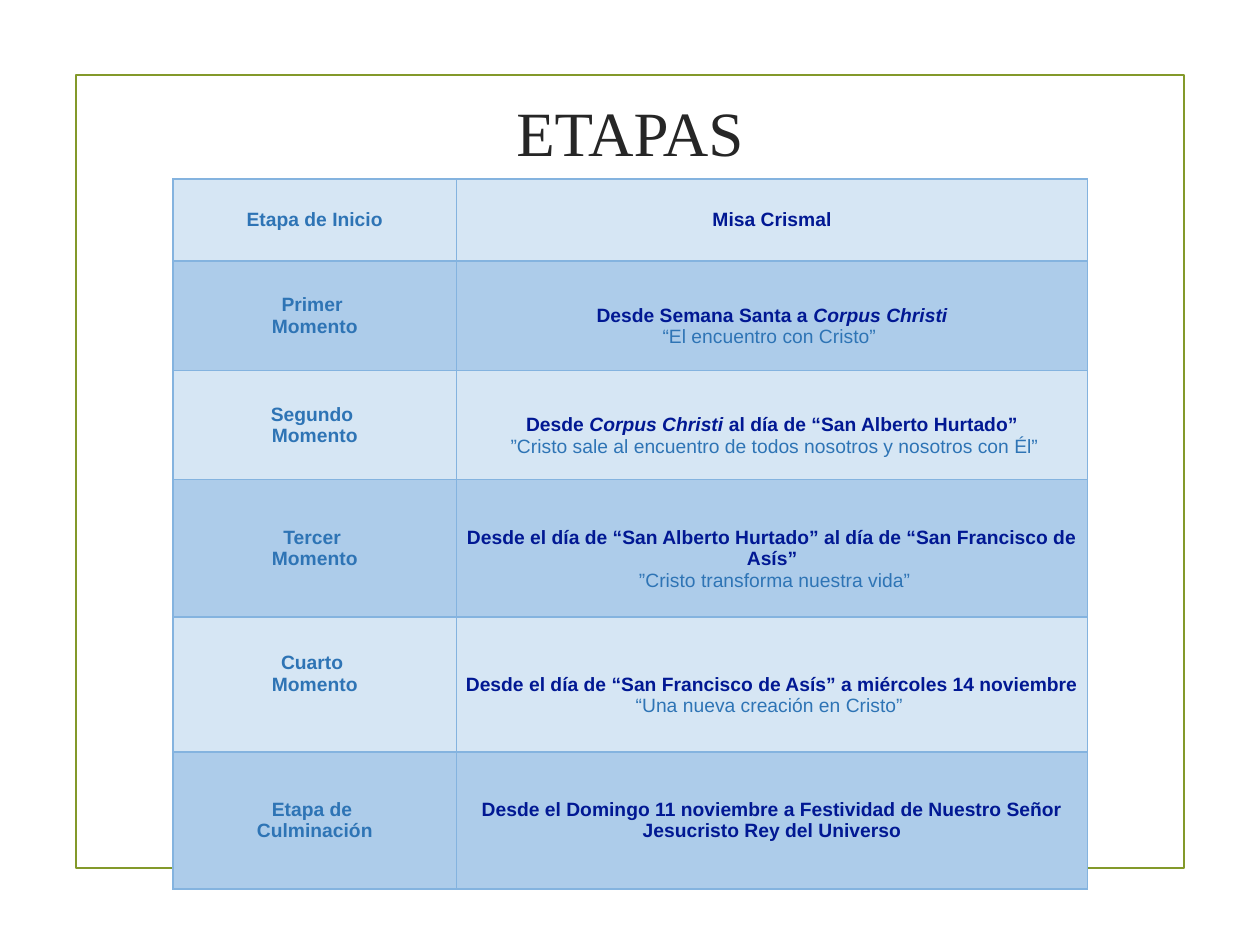
from dataclasses import dataclass

from lxml.etree import SubElement
from pptx import Presentation
from pptx.dml.color import RGBColor as Color
from pptx.enum.shapes import MSO_SHAPE as Shape
from pptx.enum.text import MSO_ANCHOR as Anchor, PP_ALIGN as Align
from pptx.oxml.ns import qn
from pptx.util import Pt


@dataclass(frozen=True)
class Theme:
    frame: str = "83992A"
    title: str = "262626"
    label: str = "2E74B5"
    period: str = "011893"
    border: str = "84B3DF"
    bands: tuple = ("D6E6F4", "ADCCEA")
    title_font: str = "Times New Roman"
    table_font: str = "Arial"
    title_size: float = 36
    table_size: float = 11
    line_height: float = 12.3


@dataclass(frozen=True)
class Stage:
    label: tuple
    period: tuple
    motto: str = ""
    height: float = 62.5
    label_bottom: float = 0


STAGES = [
    Stage(("Etapa de Inicio",), ("Misa Crismal",), height=47),
    Stage(("Primer ", "Momento"), ("Desde Semana Santa a ", "Corpus Christi"),
          "“El encuentro con Cristo” "),
    Stage(("Segundo ", "Momento"),
          ("Desde ", "Corpus Christi", " al día de “San Alberto Hurtado”"),
          " ”Cristo sale al encuentro de todos nosotros y nosotros con Él”"),
    Stage(("Tercer ", "Momento"),
          ("Desde el día de “San Alberto Hurtado” al día de “San Francisco de Asís”",),
          " ”Cristo transforma nuestra vida”", 78.5),
    Stage(("Cuarto ", "Momento"),
          ("Desde el día de “San Francisco de Asís” a miércoles 14 noviembre",),
          "“Una nueva creación en Cristo” ", 77, Theme.line_height),
    Stage(("Etapa de ", "Culminación"),
          ("Desde el Domingo 11 noviembre a Festividad de Nuestro Señor "
           "Jesucristo Rey del Universo",), height=78.5),
]


class PageBuilder:
    def __init__(self, page, theme):
        self.page = page
        self.theme = theme

    def style(self, para, font, size, color, bold=False):
        para.alignment = Align.CENTER
        para.font.name = font
        para.font.size = Pt(size)
        para.font.bold = bold
        para.font.color.rgb = Color.from_string(color)

    def frame(self, left, top, width, height):
        box = self.page.shapes.add_shape(
            Shape.RECTANGLE, Pt(left), Pt(top), Pt(width), Pt(height))
        box.shadow.inherit = False
        box.fill.background()
        box.line.color.rgb = Color.from_string(self.theme.frame)
        box.line.width = Pt(1.25)

    def title(self, text, left, top, width, height):
        box = self.page.shapes.title
        box.left, box.top = Pt(left), Pt(top)
        box.width, box.height = Pt(width), Pt(height)
        box.text_frame.text = text
        box.text_frame.vertical_anchor = Anchor.MIDDLE
        self.style(box.text_frame.paragraphs[0], self.theme.title_font,
                   self.theme.title_size, self.theme.title)

    def borders(self, cell):
        properties = cell._tc.get_or_add_tcPr()
        for side in ("lnL", "lnR", "lnT", "lnB"):
            line = SubElement(properties, qn(f"a:{side}"), w=str(Pt(1)))
            fill = SubElement(line, qn("a:solidFill"))
            SubElement(fill, qn("a:srgbClr"), val=self.theme.border)

    def cell(self, cell, lines, band, top=0, bottom=0):
        self.borders(cell)
        cell.fill.solid()
        cell.fill.fore_color.rgb = Color.from_string(band)
        cell.vertical_anchor = Anchor.MIDDLE
        cell.margin_left = cell.margin_right = Pt(4.9)
        cell.margin_top, cell.margin_bottom = Pt(top), Pt(bottom)
        frame = cell.text_frame
        for index, (parts, color, bold) in enumerate(lines):
            para = frame.add_paragraph() if index else frame.paragraphs[0]
            self.style(para, self.theme.table_font, self.theme.table_size, color, bold)
            for position, text in enumerate(parts):
                span = para.add_run()
                span.text = text
                if position == 1:
                    span.font.italic = True

    def table(self, stages, left, top, widths):
        theme = self.theme
        height = sum(stage.height for stage in stages)
        table = self.page.shapes.add_table(
            len(stages), len(widths), Pt(left), Pt(top),
            Pt(sum(widths)), Pt(height)).table
        table.first_row = table.horz_banding = False
        for column, width in zip(table.columns, widths):
            column.width = Pt(width)
        for index, stage in enumerate(stages):
            table.rows[index].height = Pt(stage.height)
            band = theme.bands[index % 2]
            labels = [((text,), theme.label, True) for text in stage.label]
            details = [(stage.period, theme.period, True)]
            if stage.motto:
                details.append(((stage.motto,), theme.label, False))
            self.cell(table.cell(index, 0), labels, band, bottom=stage.label_bottom)
            self.cell(table.cell(index, 1), details, band,
                      top=theme.line_height if stage.motto else 0)


def main():
    deck = Presentation()
    deck.slide_width, deck.slide_height = Pt(720), Pt(540)
    builder = PageBuilder(deck.slides.add_slide(deck.slide_layouts[5]), Theme())
    builder.frame(43.5, 42.75, 633, 453.25)
    builder.title("ETAPAS", 98.6, 48.25, 522.7, 54)
    builder.table(STAGES, 98.8, 102.2, (162.2, 360.4))
    deck.save("out.pptx")


if __name__ == "__main__":
    main()
